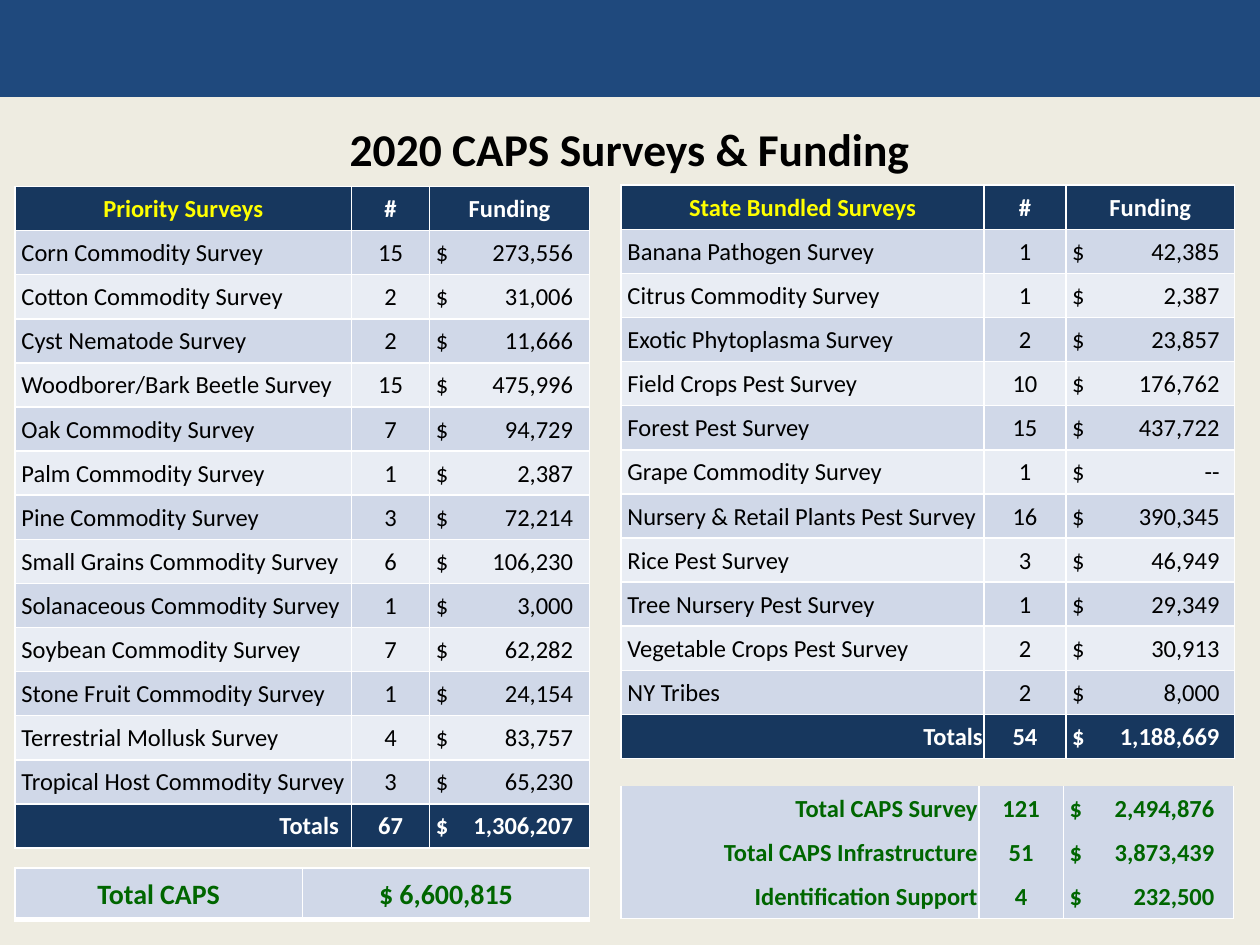
from lxml import etree
from pptx import Presentation
from pptx.dml.color import RGBColor
from pptx.enum.shapes import MSO_SHAPE
from pptx.enum.text import MSO_ANCHOR, PP_ALIGN
from pptx.oxml.ns import qn
from pptx.util import Inches, Pt

THEME = {
    "font": "Calibri", "page": "EEECE1", "band": "1F497D", "head": "17375E",
    "stripes": ("D0D8E8", "E9EDF4"), "border": "FFFFFF", "text": "000000",
    "light": "FFFFFF", "accent": "FFFF00", "total": "006600",
    "title_size": 26, "table_size": 14, "grand_size": 16,
}
TITLE = "2020 CAPS Surveys & Funding"
COLUMNS = ("#", "Funding")
PRIORITY = [
    ("Corn Commodity Survey", "15", "273,556"),
    ("Cotton Commodity Survey", "2", "31,006"),
    ("Cyst Nematode Survey", "2", "11,666"),
    ("Woodborer/Bark Beetle Survey", "15", "475,996"),
    ("Oak Commodity Survey", "7", "94,729"),
    ("Palm Commodity Survey", "1", "2,387"),
    ("Pine Commodity Survey", "3", "72,214"),
    ("Small Grains Commodity Survey", "6", "106,230"),
    ("Solanaceous Commodity Survey", "1", "3,000"),
    ("Soybean Commodity Survey", "7", "62,282"),
    ("Stone Fruit Commodity Survey", "1", "24,154"),
    ("Terrestrial Mollusk Survey", "4", "83,757"),
    ("Tropical Host Commodity Survey", "3", "65,230"),
    ("Totals", "67", "1,306,207"),
]
BUNDLED = [
    ("Banana Pathogen Survey", "1", "42,385"),
    ("Citrus Commodity Survey", "1", "2,387"),
    ("Exotic Phytoplasma Survey", "2", "23,857"),
    ("Field Crops Pest Survey", "10", "176,762"),
    ("Forest Pest Survey", "15", "437,722"),
    ("Grape Commodity Survey", "1", "--"),
    ("Nursery & Retail Plants Pest Survey", "16", "390,345"),
    ("Rice Pest Survey", "3", "46,949"),
    ("Tree Nursery Pest Survey", "1", "29,349"),
    ("Vegetable Crops Pest Survey", "2", "30,913"),
    ("NY Tribes", "2", "8,000"),
    ("Totals", "54", "1,188,669"),
]
SUMMARY = [
    ("Total CAPS Survey", "121", "2,494,876"),
    ("Total CAPS Infrastructure", "51", "3,873,439"),
    ("Identification Support", "4", "232,500"),
]
GRAND_TOTAL = ("Total CAPS", "$ 6,600,815")
ROW_HEIGHT = 0.35
INDENT = 0.05
BOXED = {"L": 1, "R": 1, "T": 1, "B": 1}


def rgb(key):
    return RGBColor.from_string(THEME.get(key, key))


def set_borders(cell, widths):
    properties = cell._tc.get_or_add_tcPr()
    for position, side in enumerate("LRTB"):
        line = etree.Element(qn(f"a:ln{side}"), w=str(Pt(widths.get(side, 0))))
        if side in widths:
            fill = etree.SubElement(line, qn("a:solidFill"))
            etree.SubElement(fill, qn("a:srgbClr"), val=THEME["border"])
        else:
            etree.SubElement(line, qn("a:noFill"))
        properties.insert(position, line)


def set_font(font, size, color, bold):
    for name, value in {"name": THEME["font"], "size": Pt(THEME[size]), "bold": bold}.items():
        setattr(font, name, value)
    font.color.rgb = rgb(color)


def fill_cell(cell, text, fill, color, align, bold=True, size="table_size",
              left=0.01, right=0.01, tab=None, borders=BOXED):
    margins = {"margin_left": Inches(left), "margin_right": Inches(right),
               "margin_top": Inches(0.01), "margin_bottom": 0,
               "vertical_anchor": MSO_ANCHOR.MIDDLE}
    for name, value in margins.items():
        setattr(cell, name, value)
    cell.fill.solid()
    cell.fill.fore_color.rgb = rgb(fill)
    set_borders(cell, borders)
    paragraph = cell.text_frame.paragraphs[0]
    paragraph.alignment = align
    if tab:
        stops = etree.SubElement(paragraph._p.get_or_add_pPr(), qn("a:tabLst"))
        etree.SubElement(stops, qn("a:tab"), pos=str(Inches(tab)), algn="r")
    run = paragraph.add_run()
    run.text = text
    set_font(run.font, size, color, bold)


def add_grid(slide, left, top, widths, count, height=ROW_HEIGHT):
    grid = slide.shapes.add_table(count, len(widths), Inches(left), Inches(top),
                                  Inches(sum(widths)), Inches(height * count)).table
    grid.first_row = grid.horz_banding = False
    for column, width in zip(grid.columns, widths):
        column.width = Inches(width)
    for row in grid.rows:
        row.height = Inches(height)
    return grid


def fill_row(grid, index, row, fill, color, tab, label_align, bold=True,
             label_right=0.01, borders=BOXED):
    label, number, amount = row
    style = {"fill": fill, "color": color, "bold": bold, "borders": borders}
    fill_cell(grid.cell(index, 0), label, align=label_align, left=INDENT,
              right=label_right, **style)
    fill_cell(grid.cell(index, 1), number, align=PP_ALIGN.CENTER, **style)
    fill_cell(grid.cell(index, 2), f"$\t{amount}", align=PP_ALIGN.LEFT,
              left=INDENT, tab=tab, **style)


def add_survey_table(slide, heading, rows, left, top, widths, tab, total_right):
    grid = add_grid(slide, left, top, widths, len(rows) + 1)
    for column, text in enumerate((heading, *COLUMNS)):
        fill_cell(grid.cell(0, column), text, "head",
                  "light" if column else "accent", PP_ALIGN.CENTER)
    *surveys, totals = rows
    for index, row in enumerate(surveys):
        fill_row(grid, index + 1, row, THEME["stripes"][index % 2], "text", tab,
                 PP_ALIGN.LEFT, bold=False)
    fill_row(grid, len(rows), totals, "head", "light", tab, PP_ALIGN.RIGHT,
             label_right=total_right)


def add_summary(slide):
    grid = add_grid(slide, 4.93, 6.24, (2.84, 0.67, 1.35), len(SUMMARY))
    for index, row in enumerate(SUMMARY):
        borders = {"L": 1, "R": 1}
        if index == len(SUMMARY) - 1:
            borders["B"] = 1
        fill_row(grid, index, row, THEME["stripes"][0], "total", 1.15,
                 PP_ALIGN.RIGHT, borders=borders)


def add_grand_total(slide):
    grid = add_grid(slide, 0.12, 6.89, (2.28, 2.28), 1, 0.41)
    for column, text in enumerate(GRAND_TOTAL):
        fill_cell(grid.cell(0, column), text, THEME["stripes"][0], "total",
                  PP_ALIGN.CENTER, size="grand_size", borders={**BOXED, "B": 3})


def add_title(slide):
    title = slide.shapes.title
    place = {"left": 0.5, "top": 0.79, "width": 9, "height": 0.78}
    for name, value in place.items():
        setattr(title, name, Inches(value))
    title.text_frame.vertical_anchor = MSO_ANCHOR.MIDDLE
    paragraph = title.text_frame.paragraphs[0]
    paragraph.alignment = PP_ALIGN.CENTER
    run = paragraph.add_run()
    run.text = TITLE
    set_font(run.font, "title_size", "text", True)
    effects = etree.Element(qn("a:effectLst"))
    shadow = etree.SubElement(effects, qn("a:outerShdw"), blurRad=str(Pt(3)),
                              dist=str(Pt(3)), dir="2700000", algn="tl")
    shade = etree.SubElement(shadow, qn("a:srgbClr"), val=THEME["text"])
    etree.SubElement(shade, qn("a:alpha"), val="43000")
    run.font._element.find(qn("a:solidFill")).addnext(effects)


def main():
    deck = Presentation()
    deck.slide_width, deck.slide_height = Inches(10), Inches(7.5)
    slide = deck.slides.add_slide(deck.slide_layouts[5])
    slide.background.fill.solid()
    slide.background.fill.fore_color.rgb = rgb("page")
    band = slide.shapes.add_shape(MSO_SHAPE.RECTANGLE, 0, 0, Inches(10), Inches(0.77))
    band.shadow.inherit = False
    band.fill.solid()
    band.fill.fore_color.rgb = rgb("band")
    band.line.fill.background()
    add_title(slide)
    add_survey_table(slide, "Priority Surveys", PRIORITY, 0.12, 1.48,
                     (2.67, 0.62, 1.27), 1.09, 0.1)
    add_survey_table(slide, "State Bundled Surveys", BUNDLED, 4.93, 1.47,
                     (2.88, 0.65, 1.34), 1.17, 0.01)
    add_grand_total(slide)
    add_summary(slide)
    deck.save("out.pptx")


if __name__ == "__main__":
    main()
